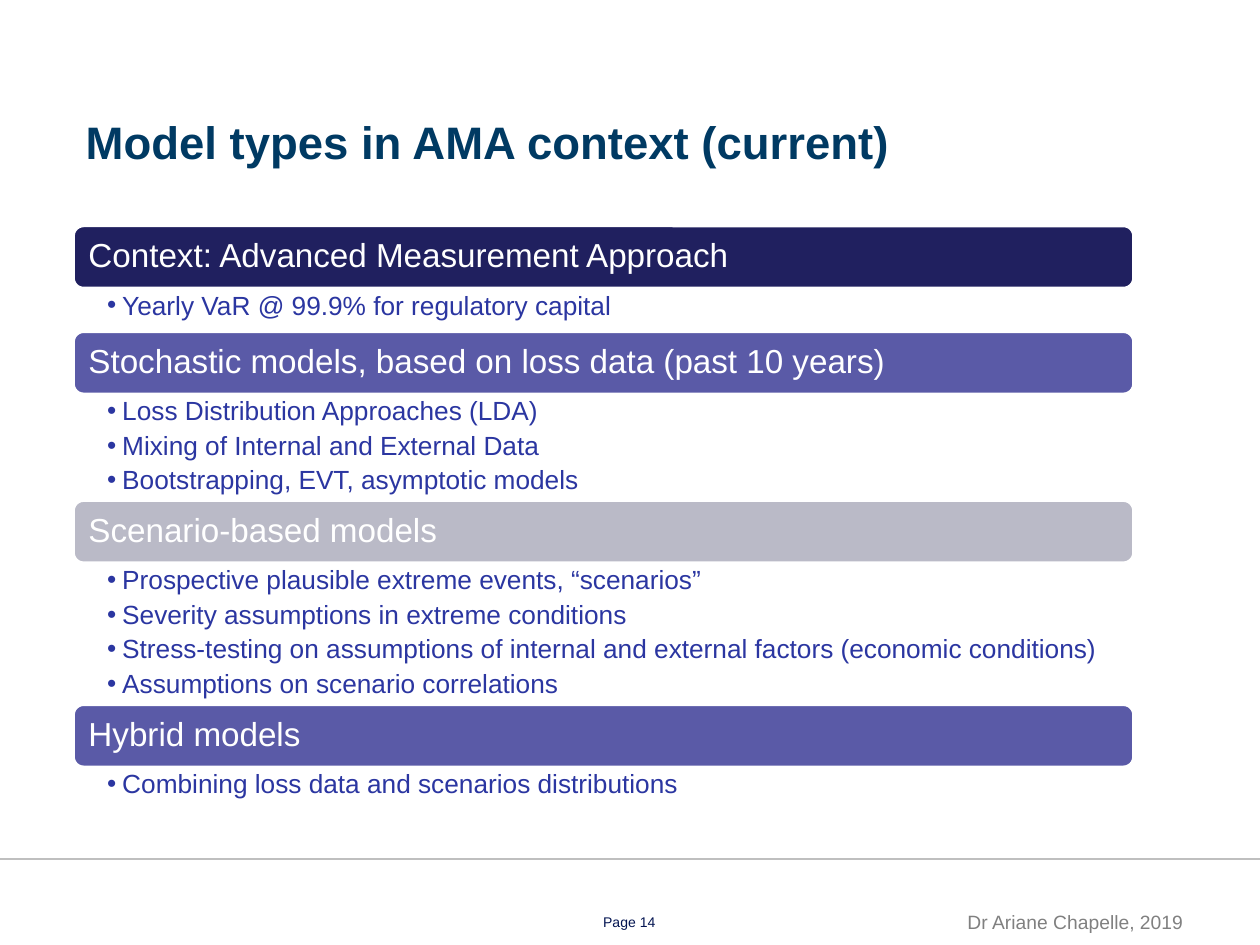
from dataclasses import dataclass

from lxml.etree import SubElement as Sub
from pptx import Presentation
from pptx.dml.color import RGBColor as Rgb
from pptx.enum.shapes import MSO_CONNECTOR as Conn, MSO_SHAPE as Geo
from pptx.enum.text import MSO_ANCHOR as Anchor, MSO_AUTO_SIZE as Fit, PP_ALIGN as Align
from pptx.oxml.ns import qn
from pptx.util import Inches, Pt


@dataclass(frozen=True)
class Theme:
    face: str = "Arial"
    title: str = "003A63"
    navy: str = "20205F"
    violet: str = "5A5AA7"
    grey: str = "BABAC7"
    white: str = "FFFFFF"
    list: str = "2B36A1"
    page: str = "031451"
    foot: str = "808080"
    rule: str = "BFBFBF"
    title_pt: int = 26
    bar_pt: int = 19
    list_pt: int = 15
    page_pt: int = 8
    foot_pt: int = 11


@dataclass(frozen=True)
class Part:
    head: str
    fill: str
    items: tuple[str, ...]
    high: float


T = Theme()
LEFT, TOP, WIDE, BAR = 0.58, 1.79, 8.42, 0.5
PARTS = (
    Part("Context: Advanced Measurement Approach", T.navy,
         ("Yearly VaR @ 99.9% for regulatory capital",), 0.34),
    Part("Stochastic models, based on loss data (past 10 years)", T.violet,
         ("Loss Distribution Approaches (LDA)",
          "Mixing of Internal and External Data",
          "Bootstrapping, EVT, asymptotic models"), 0.84),
    Part("Scenario-based models", T.grey,
         ("Prospective plausible extreme events, “scenarios”",
          "Severity assumptions in extreme conditions",
          "Stress-testing on assumptions of internal and external factors (economic conditions)",
          "Assumptions on scenario correlations"), 1.12),
    Part("Hybrid models", T.violet,
         ("Combining loss data and scenarios distributions",), 0.34),
)


def put(obj, vals: dict) -> None:
    """Set each named attribute."""
    for name, val in vals.items():
        setattr(obj, name, val)


def place(shape, *box: float) -> None:
    put(shape, dict(zip(("left", "top", "width", "height"), map(Inches, box))))


def frame(shape, anchor, pads=(0.1, 0.05, 0.1, 0.05)):
    text = shape.text_frame
    names = ("margin_left", "margin_top", "margin_right", "margin_bottom")
    put(text, {"word_wrap": True, "auto_size": Fit.NONE, "vertical_anchor": anchor,
               **dict(zip(names, map(Inches, pads)))})
    return text


def style(para, size: int, color: str, bold: bool = False, **form) -> None:
    put(para, {"alignment": Align.LEFT, "space_before": Pt(0), **form})
    put(para.font, {"name": T.face, "size": Pt(size), "bold": bold})
    para.font.color.rgb = Rgb.from_string(color)


def bullet(para) -> None:
    prop = para._p.get_or_add_pPr()
    put_in = {"marL": Inches(0.12), "indent": Inches(-0.12)}
    for name, val in put_in.items():
        prop.set(name, str(int(val)))
    Sub(prop, qn("a:buFont"), typeface=T.face)
    Sub(prop, qn("a:buChar"), char="•")


def bar(slide, part: Part, top: float) -> None:
    shape = slide.shapes.add_shape(Geo.ROUNDED_RECTANGLE, *map(Inches, (LEFT, top, WIDE, BAR)))
    shape.shadow.inherit = False
    shape.fill.solid()
    shape.fill.fore_color.rgb = Rgb.from_string(part.fill)
    shape.line.color.rgb = Rgb.from_string(T.white)
    shape.line.width = Pt(2)
    text = frame(shape, Anchor.MIDDLE)
    text.text = part.head
    style(text.paragraphs[0], T.bar_pt, T.white, line_spacing=0.9)


def points(holder, part: Part, top: float) -> None:
    place(holder, LEFT, top, WIDE, part.high)
    text = frame(holder, Anchor.TOP, (0.27, 0.03, 0.15, 0.03))
    text.text = "\n".join(part.items)
    for para in text.paragraphs:
        bullet(para)
        style(para, T.list_pt, T.list, line_spacing=0.9, space_after=Pt(3.5))


def label(slide, words: str, box: tuple, size: int, color: str, align) -> None:
    shape = slide.shapes.add_textbox(*map(Inches, box))
    text = frame(shape, Anchor.MIDDLE, (0.1, 0, 0.1, 0))
    text.text = words
    style(text.paragraphs[0], size, color, alignment=align)


def main() -> None:
    deck = Presentation()
    put(deck, {"slide_width": Inches(10), "slide_height": Inches(7.5)})
    # The Comparison layout has a title and four body placeholders
    slide = deck.slides.add_slide(deck.slide_layouts.get_by_name("Comparison"))
    title, *bodies = slide.placeholders

    # Title
    place(title, LEFT, 0.89, 9.08, 0.47)
    text = frame(title, Anchor.MIDDLE)
    text.text = "Model types in AMA context (current)"
    style(text.paragraphs[0], T.title_pt, T.title, bold=True)

    # Bars, each followed by its list
    top = TOP
    for part, body in zip(PARTS, bodies):
        bar(slide, part, top)
        points(body, part, top + BAR)
        top += BAR + part.high

    # Footer
    rule = slide.shapes.add_connector(Conn.STRAIGHT, *map(Inches, (0, 6.82, 10, 6.82)))
    rule.line.color.rgb = Rgb.from_string(T.rule)
    rule.line.width = Pt(1)
    Sub(rule._element.spPr, qn("a:effectLst"))
    label(slide, "Page 14", (4.21, 7.22, 1.57, 0.2), T.page_pt, T.page, Align.CENTER)
    label(slide, "Dr Ariane Chapelle, 2019", (0.2, 7.17, 9.29, 0.29),
          T.foot_pt, T.foot, Align.RIGHT)
    deck.save("out.pptx")


if __name__ == "__main__":
    main()
